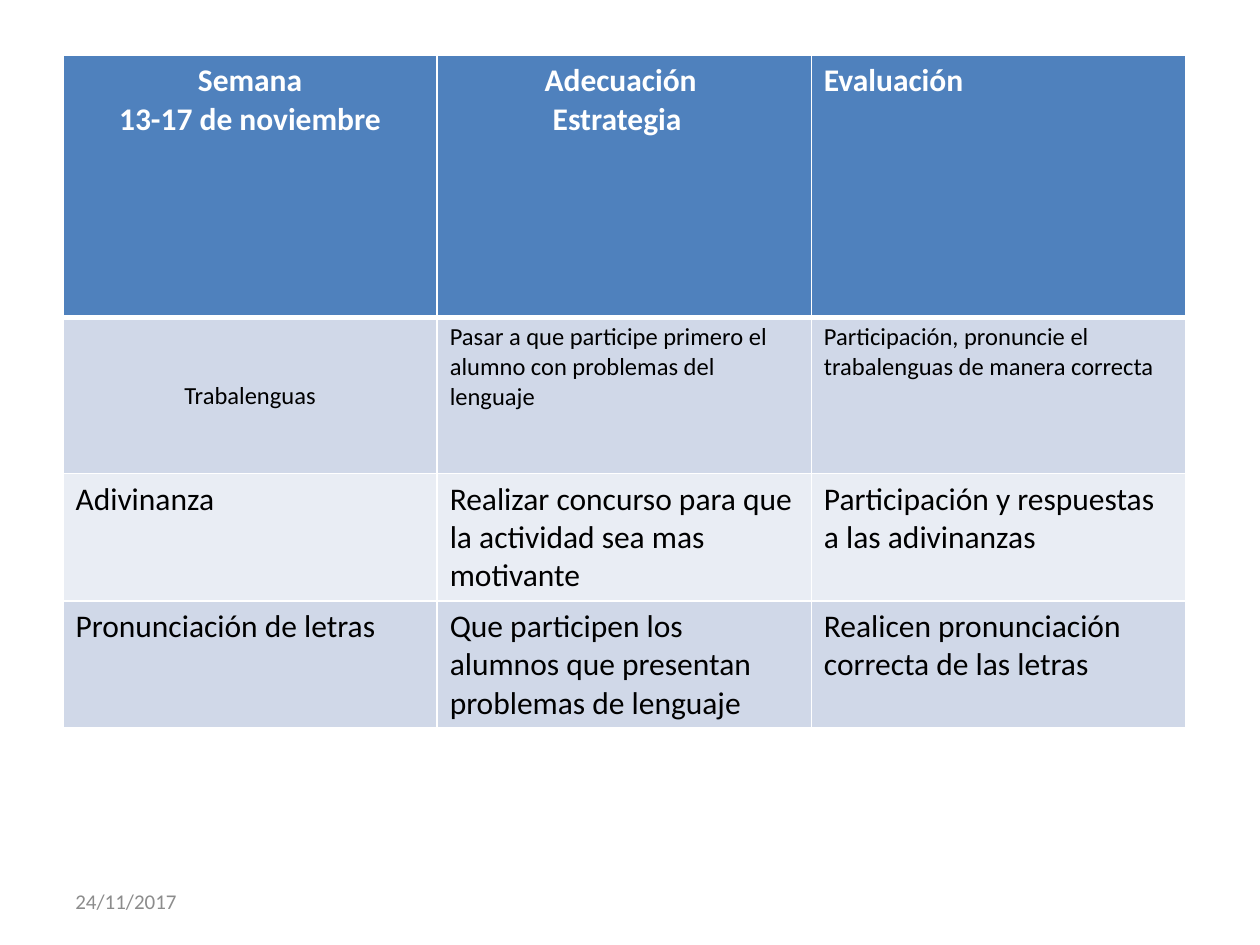
from lxml import etree
from pptx import Presentation
from pptx.dml.color import RGBColor
from pptx.enum.text import MSO_ANCHOR as Anchor, PP_ALIGN as Align
from pptx.oxml.ns import qn
from pptx.util import Inches, Pt


def color(value):
    return RGBColor.from_string(value)


def write_text(frame, text, text_color, align=Align.LEFT, **font_format):
    """Write one paragraph per line with a shared font format."""
    frame.word_wrap = True
    frame.text = text
    for paragraph in frame.paragraphs:
        paragraph.alignment = align
        font = paragraph.runs[0].font
        font.name = "Calibri"
        font.color.rgb = color(text_color)
        for name, value in font_format.items():
            setattr(font, name, value)


presentation = Presentation()
presentation.slide_width = Inches(10)
presentation.slide_height = Inches(7.5)
slide = presentation.slides.add_slide(presentation.slide_layouts[6])

# Date
date_box = slide.shapes.add_textbox(Inches(0.5), Inches(6.95), Inches(2.33), Inches(0.4))
date_box.text_frame.vertical_anchor = Anchor.MIDDLE
write_text(date_box.text_frame, "24/11/2017", "8C8C8C", size=Pt(12))

# Weekly plan: height, fill, text colour, size, bold, vertical margin, cells
rows = [
    (2.08, "4F81BD", "FFFFFF", 18, True, 0.05,
     ["Semana\n13-17 de noviembre", "Adecuación \nEstrategia  ", "Evaluación"]),
    (1.24, "D0D8E8", "000000", 14, False, 0.04,
     ["Trabalenguas",
      "Pasar a que participe primero el alumno con problemas del lenguaje",
      "Participación, pronuncie el trabalenguas de manera correcta"]),
    (1.01, "E9EDF4", "000000", 18, False, 0.05,
     ["Adivinanza",
      "Realizar concurso para que la actividad sea mas motivante",
      "Participación y respuestas a las adivinanzas"]),
    (1.01, "D0D8E8", "000000", 18, False, 0.05,
     ["Pronunciación de letras",
      "Que participen los alumnos que presentan problemas de lenguaje",
      "Realicen pronunciación correcta de las letras"]),
]
centered = {(0, 0), (0, 1), (1, 0)}
column_width = 2.97

table = slide.shapes.add_table(
    len(rows), 3, Inches(0.5), Inches(0.44),
    Inches(3 * column_width), Inches(sum(row[0] for row in rows)),
).table
for column in table.columns:
    column.width = Inches(column_width)

for r, (height, fill, text_color, size, bold, margin, texts) in enumerate(rows):
    table.rows[r].height = Inches(height)
    for c, text in enumerate(texts):
        cell = table.cell(r, c)
        cell.fill.solid()
        cell.fill.fore_color.rgb = color(fill)
        cell.margin_top = cell.margin_bottom = Inches(margin)
        align = Align.CENTER if (r, c) in centered else Align.LEFT
        write_text(cell.text_frame, text, text_color, align, size=Pt(size), bold=bold)

        # White borders, thicker under the header
        widths = {"L": 1, "R": 1, "T": 3 if r == 1 else 1, "B": 3 if r == 0 else 1}
        properties = cell._tc.get_or_add_tcPr()
        for position, (side, width) in enumerate(widths.items()):
            line = etree.Element(qn(f"a:ln{side}"), w=str(Pt(width)))
            solid = etree.SubElement(line, qn("a:solidFill"))
            etree.SubElement(solid, qn("a:srgbClr"), val="FFFFFF")
            properties.insert(position, line)

table.cell(1, 0).vertical_anchor = Anchor.MIDDLE

presentation.save("out.pptx")
